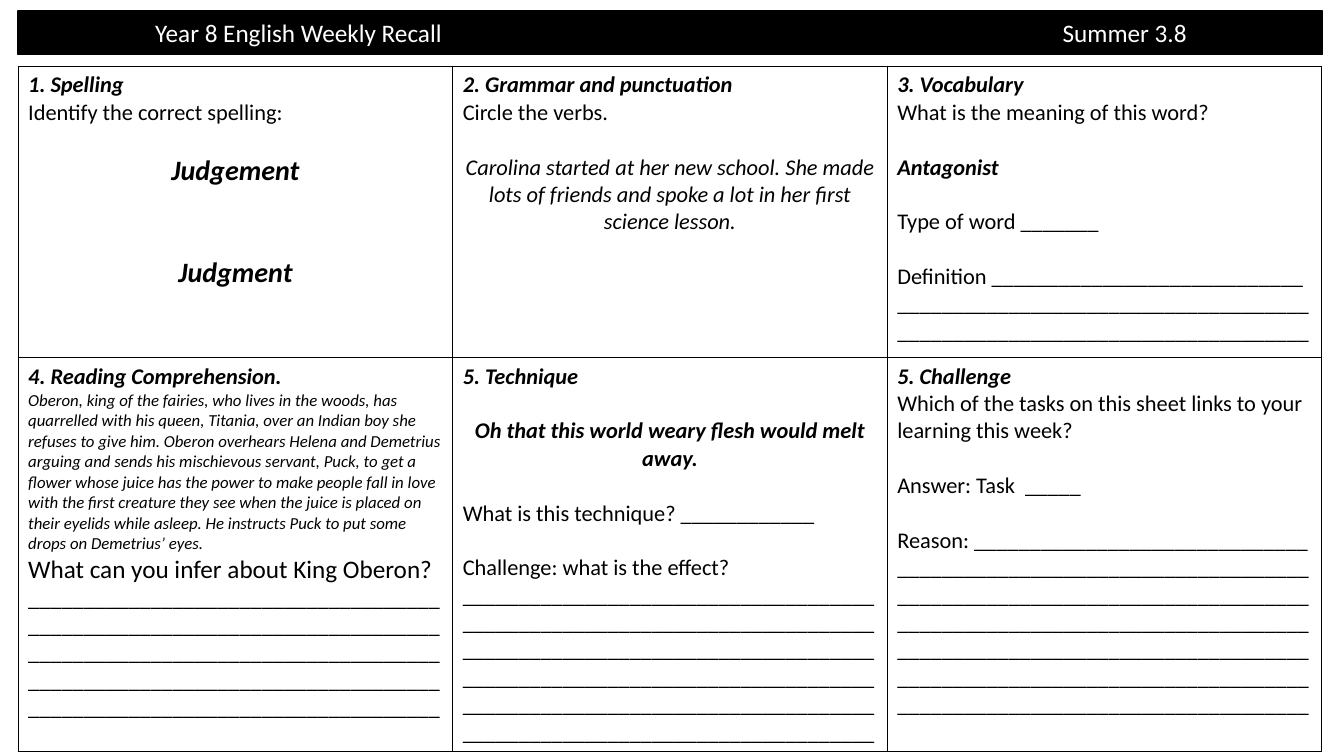
from dataclasses import dataclass

from lxml.etree import SubElement
from pptx import Presentation
from pptx.dml.color import RGBColor
from pptx.enum.text import MSO_ANCHOR, MSO_AUTO_SIZE, PP_ALIGN
from pptx.oxml.ns import qn
from pptx.util import Inches, Pt

BLACK = RGBColor(0, 0, 0)
WHITE = RGBColor(255, 255, 255)
FONT = "Calibri"
LEFT, WIDTH = Inches(0.18), Inches(12.94)
ROW_HEIGHTS = (Inches(2.89), Inches(3.73))
COLUMN_WIDTH = Inches(4.31)
LINE_HEIGHT = 1.22
RULE = "_" * 37


@dataclass(frozen=True)
class Line:
    text: str
    size: int = 16
    bold: bool = False
    italic: bool = False
    centred: bool = False
    gap: float = 0


def heading(text: str) -> Line:
    return Line(text, bold=True, italic=True)


def after_blank(text: str, **look) -> Line:
    return Line(text, gap=16 * LINE_HEIGHT, **look)


EMPHASIS = {"bold": True, "italic": True}
TASKS = (
    (
        (
            heading("1. Spelling"),
            Line("Identify the correct spelling:"),
            after_blank("Judgement", size=20, centred=True, **EMPHASIS),
            Line("Judgment", 20, centred=True, gap=40 * LINE_HEIGHT, **EMPHASIS),
        ),
        (
            heading("2. Grammar and punctuation"),
            Line("Circle the verbs."),
            after_blank(
                "Carolina started at her new school. She made lots of friends "
                "and spoke a lot in her first science lesson.",
                italic=True, centred=True,
            ),
        ),
        (
            heading("3. Vocabulary"),
            Line("What is the meaning of this word?"),
            after_blank("Antagonist", **EMPHASIS),
            after_blank("Type of word _______"),
            after_blank("Definition " + "_" * 28 + " " + RULE * 2),
        ),
    ),
    (
        (
            heading("4. Reading Comprehension."),
            Line(
                "Oberon, king of the fairies, who lives in the woods, has quarrelled "
                "with his queen, Titania, over an Indian boy she refuses to give him. "
                "Oberon overhears Helena and Demetrius arguing and sends his "
                "mischievous servant, Puck, to get a flower whose juice has the power "
                "to make people fall in love with the first creature they see when "
                "the juice is placed on their eyelids while asleep. He instructs Puck "
                "to put some drops on Demetrius’ eyes.",
                12, italic=True,
            ),
            Line("What can you infer about King Oberon?", 18),
            Line(RULE * 5),
        ),
        (
            heading("5. Technique"),
            after_blank("Oh that this world weary flesh would melt away.",
                        centred=True, **EMPHASIS),
            after_blank("What is this technique? ____________"),
            after_blank("Challenge: what is the effect? " + RULE * 6),
        ),
        (
            heading("5. Challenge"),
            Line("Which of the tasks on this sheet links to your learning this week?"),
            after_blank("Answer: Task  _____"),
            after_blank("Reason: " + "_" * 30 + " " + RULE * 6),
        ),
    ),
)


def apply(target, values: dict) -> None:
    for name, value in values.items():
        setattr(target, name, value)


def write_line(para, line: Line, colour: RGBColor) -> None:
    apply(para, {
        "alignment": PP_ALIGN.CENTER if line.centred else PP_ALIGN.LEFT,
        "space_before": Pt(line.gap),
    })
    span = para.add_run()
    span.text = line.text
    apply(span.font, {"name": FONT, "size": Pt(line.size),
                      "bold": line.bold, "italic": line.italic})
    span.font.color.rgb = colour


def draw_borders(cell) -> None:
    properties = cell._tc.get_or_add_tcPr()
    for index, side in enumerate(("lnL", "lnR", "lnT", "lnB")):
        border = properties.makeelement(qn(f"a:{side}"), {"w": str(Pt(1))})
        properties.insert(index, border)
        fill = SubElement(border, qn("a:solidFill"))
        SubElement(fill, qn("a:srgbClr"), val=str(BLACK))


def add_header(page) -> None:
    box = page.shapes.title
    apply(box, {"left": LEFT, "top": Inches(0.11),
                "width": WIDTH, "height": Inches(0.43)})
    box.fill.solid()
    box.fill.fore_color.rgb = BLACK
    box.line.color.rgb = BLACK
    box.line.width = Pt(1)
    apply(box.text_frame, {
        "auto_size": MSO_AUTO_SIZE.NONE,
        "word_wrap": True,
        "vertical_anchor": MSO_ANCHOR.MIDDLE,
        "margin_left": Inches(1.36),
        "margin_top": Inches(0.05),
        "margin_bottom": Inches(0.05),
    })
    para = box.text_frame.paragraphs[0]
    write_line(para, Line("Year 8 English Weekly Recall\tSummer 3.8", 18), WHITE)
    stops = SubElement(para._p.get_or_add_pPr(), qn("a:tabLst"))
    SubElement(stops, qn("a:tab"), pos=str(Inches(9)), algn="l")


def fill_cell(cell, lines: tuple[Line, ...]) -> None:
    cell.fill.solid()
    cell.fill.fore_color.rgb = WHITE
    draw_borders(cell)
    for index, line in enumerate(lines):
        frame = cell.text_frame
        para = frame.add_paragraph() if index else frame.paragraphs[0]
        write_line(para, line, BLACK)


def add_task_grid(page) -> None:
    grid = page.shapes.add_table(len(TASKS), len(TASKS[0]), LEFT, Inches(0.66),
                                 WIDTH, sum(ROW_HEIGHTS)).table
    apply(grid, {"first_row": False, "horz_banding": False})
    for column in grid.columns:
        column.width = COLUMN_WIDTH
    for row, height, tasks in zip(grid.rows, ROW_HEIGHTS, TASKS):
        row.height = height
        for cell, lines in zip(row.cells, tasks):
            fill_cell(cell, lines)


def main() -> None:
    deck = Presentation()
    apply(deck, {"slide_width": Inches(13.33), "slide_height": Inches(7.5)})
    page = deck.slides.add_slide(deck.slide_layouts[5])
    add_header(page)
    add_task_grid(page)
    deck.save("out.pptx")


if __name__ == "__main__":
    main()
